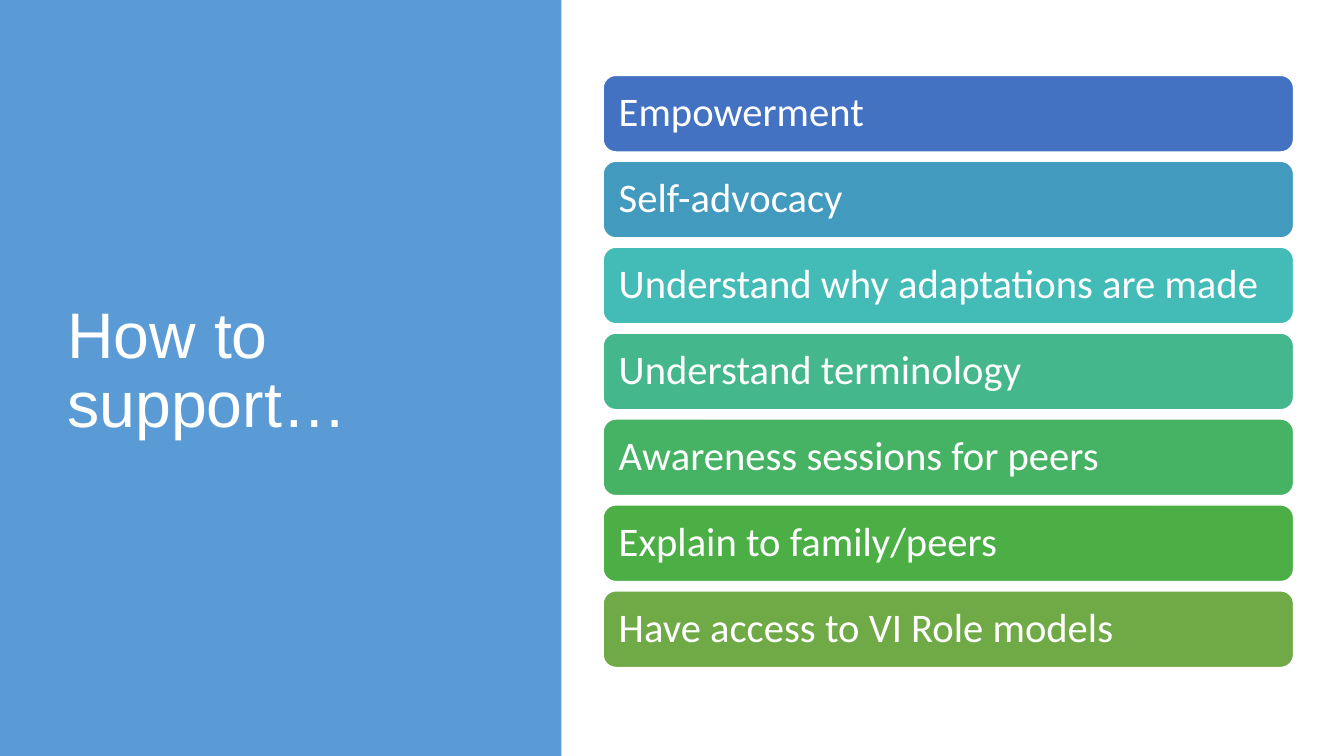
from pptx import Presentation
from pptx.dml.color import RGBColor
from pptx.enum.shapes import MSO_SHAPE
from pptx.enum.text import MSO_ANCHOR, MSO_AUTO_SIZE, PP_ALIGN
from pptx.util import Cm, Pt

RECTANGLE = MSO_SHAPE.RECTANGLE
ROUNDED_RECTANGLE = MSO_SHAPE.ROUNDED_RECTANGLE
MIDDLE = MSO_ANCHOR.MIDDLE
NO_AUTOFIT = MSO_AUTO_SIZE.NONE
LEFT = PP_ALIGN.LEFT

SLIDE_WIDTH, SLIDE_HEIGHT = 33.87, 19.05
PANEL_WIDTH = 14.15
WHITE = "FFFFFF"
PANEL_BLUE = "5B9BD5"

SUPPORT_STEPS = [
    ("Empowerment", "4372C3"),
    ("Self-advocacy", "439ABF"),
    ("Understand why adaptations are made", "43BCB8"),
    ("Understand terminology", "44B78C"),
    ("Awareness sessions for peers", "45B363"),
    ("Explain to family/peers", "4CAF46"),
    ("Have access to VI Role models", "6FAA47"),
]


def color(hex_value):
    return RGBColor.from_string(hex_value)


def set_attributes(target, values):
    for name, value in values.items():
        setattr(target, name, value)


def write_text(shape, text, font_name, size, inset_x, inset_y):
    """Fill a shape with one white, left-aligned, vertically centred line."""
    frame = shape.text_frame
    frame.text = text
    set_attributes(frame, {
        "word_wrap": True,
        "auto_size": NO_AUTOFIT,
        "vertical_anchor": MIDDLE,
        "margin_left": Cm(inset_x),
        "margin_right": Cm(inset_x),
        "margin_top": Cm(inset_y),
        "margin_bottom": Cm(inset_y),
    })
    paragraph = frame.paragraphs[0]
    set_attributes(paragraph, {
        "alignment": LEFT, "line_spacing": 0.9, "space_before": Pt(0),
    })
    set_attributes(paragraph.font, {"name": font_name, "size": Pt(size)})
    paragraph.font.color.rgb = color(WHITE)


def add_block(slide, preset, left, top, width, height, fill):
    shape = slide.shapes.add_shape(
        preset, Cm(left), Cm(top), Cm(width), Cm(height))
    shape.shadow.inherit = False
    shape.fill.solid()
    shape.fill.fore_color.rgb = color(fill)
    shape.line.fill.background()
    return shape


def add_title_panel(slide, left, top, width, height):
    panel = add_block(slide, RECTANGLE, left, top, width, height, PANEL_BLUE)
    title = slide.shapes.title
    title._element.addprevious(panel._element)  # the panel lies behind the title
    set_attributes(title, {
        "left": Cm(left + 1.45),
        "top": Cm(top + 1.73),
        "width": Cm(width - 2.42),
        "height": Cm(height - 3.76),
    })
    write_text(title, "How to support…", "Arial", 46, 0.25, 0.13)


def add_step_bars(slide, left, top, width, height):
    bar_height = 1.93
    pitch = (height - bar_height) / (len(SUPPORT_STEPS) - 1)
    for index, (text, fill) in enumerate(SUPPORT_STEPS):
        bar = add_block(slide, ROUNDED_RECTANGLE, left, top + index * pitch,
                        width, bar_height, fill)
        bar.line.color.rgb = color(WHITE)
        bar.line.width = Pt(1)
        write_text(bar, text, "Calibri", 29, 0.3, 0.3)


def main():
    presentation = Presentation()
    presentation.slide_width = Cm(SLIDE_WIDTH)
    presentation.slide_height = Cm(SLIDE_HEIGHT)
    title_only = presentation.slide_layouts.get_by_name("Title Only")
    slide = presentation.slides.add_slide(title_only)
    add_title_panel(slide, 0, 0, PANEL_WIDTH, SLIDE_HEIGHT)
    add_step_bars(slide, PANEL_WIDTH + 1.05, 1.9, 17.4, 14.92)
    presentation.save("out.pptx")


if __name__ == "__main__":
    main()
